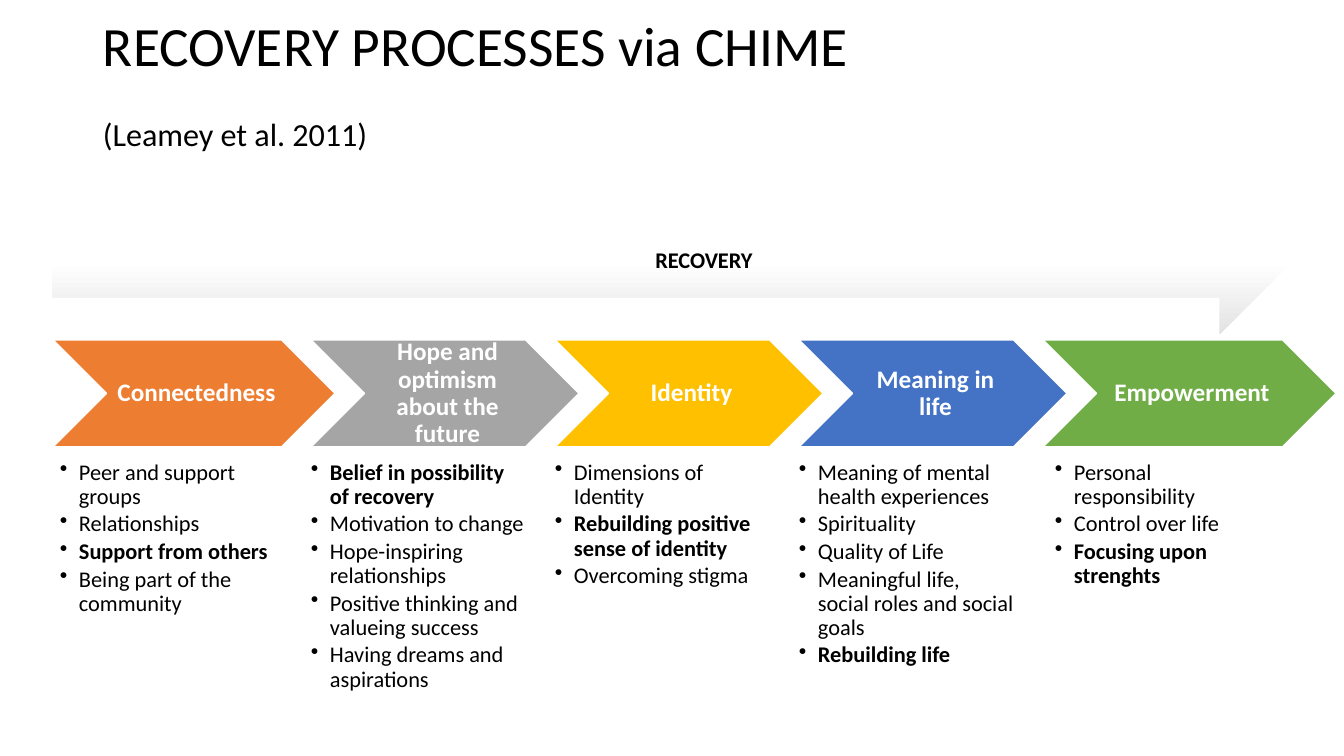
from dataclasses import dataclass

from lxml.etree import SubElement
from pptx import Presentation
from pptx.dml.color import RGBColor
from pptx.enum.shapes import MSO_SHAPE
from pptx.enum.text import MSO_ANCHOR, MSO_AUTO_SIZE, PP_ALIGN
from pptx.oxml.ns import qn
from pptx.util import Emu, Pt

EMU_PER_PX = 914400 / 100.8
SLIDE_WIDTH, SLIDE_HEIGHT = 1344, 756


@dataclass(frozen=True)
class Theme:
    font: str = "Calibri"
    ink: str = "000000"
    paper: str = "FFFFFF"
    arrow_shade: str = "E3E3E3"
    title_size: float = 39.6
    phase_size: int = 18
    body_size: int = 16
    line_spacing: float = 0.9
    point_gap: float = 2.4


@dataclass(frozen=True)
class Phase:
    name: str
    color: str
    width: int
    points: tuple
    key_point: str


PHASES = (
    Phase("Connectedness", "ED7D31", 282,
          ("Peer and support groups", "Relationships", "Support from others",
           "Being part of the community"),
          "Support from others"),
    Phase("Hope and optimism about the future", "A5A5A5", 268,
          ("Belief in possibility of recovery", "Motivation to change",
           "Hope-inspiring relationships",
           "Positive thinking and valueing success",
           "Having dreams and aspirations"),
          "Belief in possibility of recovery"),
    Phase("Identity", "FFC000", 268,
          ("Dimensions of Identity", "Rebuilding positive sense of identity",
           "Overcoming stigma"),
          "Rebuilding positive sense of identity"),
    Phase("Meaning in life", "4472C4", 268,
          ("Meaning of mental health experiences", "Spirituality",
           "Quality of Life", "Meaningful life, social roles and social goals",
           "Rebuilding life"),
          "Rebuilding life"),
    Phase("Empowerment", "70AD47", 293,
          ("Personal responsibility", "Control over life",
           "Focusing upon strenghts"),
          "Focusing upon strenghts"),
)
FIRST_LEFT, CHEVRON_TOP, CHEVRON_HEIGHT, OVERLAP = 53, 340, 107, 24
POINTS_TOP, POINTS_WIDTH, POINTS_HEIGHT = 461, 215, 239
NARROW_WIDTH = min(phase.width for phase in PHASES)


def px(length):
    return Emu(round(length * EMU_PER_PX))


def rgb(color):
    return RGBColor.from_string(color)


class SlideBuilder:
    def __init__(self, slide, theme):
        self.slide = slide
        self.theme = theme

    def prepare_frame(self, frame, insets, anchor):
        """Set wrapping, anchor and the left, top, right, bottom insets."""
        frame.word_wrap = True
        frame.auto_size = MSO_AUTO_SIZE.NONE
        frame.vertical_anchor = anchor
        (frame.margin_left, frame.margin_top,
         frame.margin_right, frame.margin_bottom) = map(px, insets)

    def format_paragraph(self, paragraph, size, color, bold=False,
                         align=PP_ALIGN.LEFT):
        paragraph.alignment = align
        paragraph.line_spacing = self.theme.line_spacing
        for run in paragraph.runs:
            run.font.name = self.theme.font
            run.font.size = Pt(size)
            run.font.bold = bold
            run.font.color.rgb = rgb(color)

    def text_box(self, left, top, width, height, anchor=MSO_ANCHOR.TOP):
        frame = self.slide.shapes.add_textbox(
            px(left), px(top), px(width), px(height)).text_frame
        self.prepare_frame(frame, (0, 0, 0, 0), anchor)
        return frame

    def title(self, heading, citation):
        """Write the heading with its citation lowered on a second line."""
        title = self.slide.shapes.title
        title.left, title.top = px(93), px(40)
        title.width, title.height = px(1159), px(146)
        frame = title.text_frame
        self.prepare_frame(frame, (10, 5, 10, 66), MSO_ANCHOR.MIDDLE)
        frame.text = f"{heading}\v{citation}"
        paragraph = frame.paragraphs[0]
        self.format_paragraph(paragraph, self.theme.title_size, self.theme.ink)
        paragraph.runs[1].font._element.set("baseline", "-25000")

    def chevron(self, left, phase):
        chevron = self.slide.shapes.add_shape(
            MSO_SHAPE.CHEVRON, px(left), px(CHEVRON_TOP),
            px(phase.width), px(CHEVRON_HEIGHT))
        chevron.shadow.inherit = False
        chevron.fill.solid()
        chevron.fill.fore_color.rgb = rgb(phase.color)
        chevron.line.color.rgb = rgb(self.theme.paper)
        chevron.line.width = Pt(1)
        frame = chevron.text_frame
        self.prepare_frame(frame, (8, 3, 3, 3), MSO_ANCHOR.MIDDLE)
        frame.text = phase.name
        self.format_paragraph(frame.paragraphs[0], self.theme.phase_size,
                              self.theme.paper, True, PP_ALIGN.CENTER)

    def points(self, left, phase):
        frame = self.text_box(left, POINTS_TOP, POINTS_WIDTH, POINTS_HEIGHT)
        frame.text = "\n".join(phase.points)
        for paragraph in frame.paragraphs:
            self.format_paragraph(paragraph, self.theme.body_size,
                                  self.theme.ink,
                                  paragraph.text == phase.key_point)
            paragraph.space_after = Pt(self.theme.point_gap)
            self.bullet(paragraph)

    def bullet(self, paragraph):
        properties = paragraph._p.get_or_add_pPr()
        properties.set("marL", str(px(19)))
        properties.set("indent", str(-px(19)))
        SubElement(properties, qn("a:buChar")).set("char", "•")

    def recovery_arrow(self, label):
        arrow = self.slide.shapes.add_shape(
            MSO_SHAPE.RIGHT_ARROW, px(52), px(190), px(1240), px(144))
        arrow.shadow.inherit = False
        arrow.line.fill.background()
        arrow.fill.gradient()
        arrow.fill.gradient_angle = 270
        stops = ((0.5, self.theme.paper), (1, self.theme.arrow_shade))
        for stop, (position, color) in zip(arrow.fill.gradient_stops, stops):
            stop.position = position
            stop.color.rgb = rgb(color)
        frame = self.text_box(453, 225, 502, 72, MSO_ANCHOR.MIDDLE)
        frame.text = label
        self.format_paragraph(frame.paragraphs[0], self.theme.body_size,
                              self.theme.ink, True, PP_ALIGN.CENTER)


def main():
    presentation = Presentation()
    presentation.slide_width = px(SLIDE_WIDTH)
    presentation.slide_height = px(SLIDE_HEIGHT)
    title_only = presentation.slide_layouts.get_by_name("Title Only")
    builder = SlideBuilder(presentation.slides.add_slide(title_only), Theme())

    builder.title("RECOVERY PROCESSES via CHIME", "(Leamey et al. 2011)")
    left = FIRST_LEFT
    for phase in PHASES:
        builder.chevron(left, phase)
        builder.points(left + (phase.width - NARROW_WIDTH) // 2, phase)
        left += phase.width - OVERLAP
    builder.recovery_arrow("RECOVERY")
    presentation.save("out.pptx")


if __name__ == "__main__":
    main()
